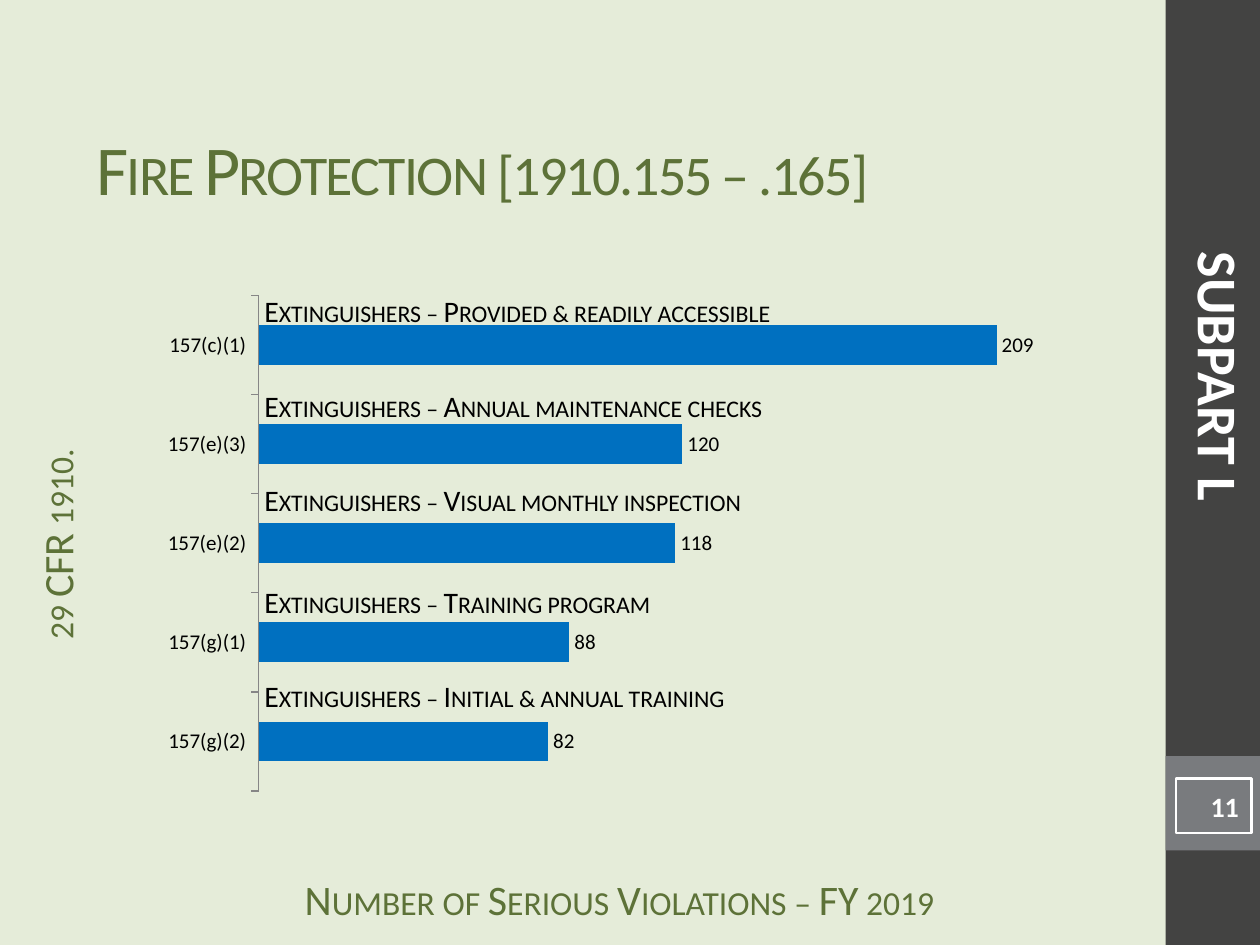
from lxml import etree
from pptx import Presentation
from pptx.chart.data import CategoryChartData
from pptx.dml.color import RGBColor
from pptx.enum.chart import XL_CHART_TYPE, XL_LABEL_POSITION, XL_TICK_MARK
from pptx.enum.shapes import MSO_SHAPE
from pptx.enum.text import MSO_ANCHOR, PP_ALIGN
from pptx.oxml.ns import qn
from pptx.util import Pt

BAR_CHART = XL_CHART_TYPE.BAR_CLUSTERED
OUTSIDE_END = XL_LABEL_POSITION.OUTSIDE_END
TICK_OUTSIDE, TICK_NONE = XL_TICK_MARK.OUTSIDE, XL_TICK_MARK.NONE
RECTANGLE = MSO_SHAPE.RECTANGLE
TOP, MIDDLE = MSO_ANCHOR.TOP, MSO_ANCHOR.MIDDLE
LEFT, CENTER, RIGHT = PP_ALIGN.LEFT, PP_ALIGN.CENTER, PP_ALIGN.RIGHT

FONT = "Calibri"
COLORS = {
    "background": "E5ECD9", "band": "434342", "band_block": "797B7E",
    "heading": "5D7238", "bar": "0070C0", "axis": "868686",
    "text": "000000", "white": "FFFFFF",
}

# Category, violations, description, top of description within the chart
VIOLATIONS = [
    ("157(c)(1)", 209, "Extinguishers – Provided & readily accessible", 1),
    ("157(e)(3)", 120, "Extinguishers – Annual maintenance checks", 55),
    ("157(e)(2)", 118, "Extinguishers – Visual monthly inspection", 109),
    ("157(g)(1)", 88, "Extinguishers – Training program", 167),
    ("157(g)(2)", 82, "Extinguishers – Initial & annual training", 221),
]
# Plot area as fractions of the chart
PLOT = {"x": 0.11, "y": 0.02, "w": 0.87, "h": 0.96}


def color(name):
    return RGBColor.from_string(COLORS[name])


def style_font(font, size, color_name, bold=False):
    font.name = FONT
    font.size = Pt(size)
    font.bold = bold
    font.color.rgb = color(color_name)


def write_text(shape, text, size, color_name, align=LEFT, anchor=TOP,
               bold=False, small_caps=False, spacing=0):
    frame = shape.text_frame
    frame.vertical_anchor = anchor
    paragraph = frame.paragraphs[0]
    paragraph.alignment = align
    style_font(paragraph.font, size, color_name, bold)
    run = paragraph.add_run()
    run.text = text
    properties = run.font._element
    if small_caps:
        properties.set("cap", "small")
    if spacing:
        properties.set("spc", str(spacing * 100))


def add_text(slide, box, text, size, color_name, wrap=True, rotation=0, **style):
    shape = slide.shapes.add_textbox(*map(Pt, box))
    shape.text_frame.word_wrap = wrap
    shape.rotation = rotation
    write_text(shape, text, size, color_name, **style)
    return shape


def add_rectangle(slide, box, fill=None, line=None):
    shape = slide.shapes.add_shape(RECTANGLE, *map(Pt, box))
    shape.shadow.inherit = False
    if fill:
        shape.fill.solid()
        shape.fill.fore_color.rgb = color(fill)
    else:
        shape.fill.background()
    if line:
        shape.line.color.rgb = color(line)
        shape.line.width = Pt(1.5)
    else:
        shape.line.fill.background()
    return shape


def add_side_band(slide, box):
    left, top, width, height = box
    add_rectangle(slide, box, fill="band")
    add_rectangle(slide, (left, top + 432, width, width), fill="band_block")

    # Page number
    number = add_rectangle(slide, (left + 6, top + 445, 43, 31), line="white")
    write_text(number, "11", 16, "white", align=RIGHT, anchor=MIDDLE, bold=True)

    # Subpart name, turned to read downwards
    add_text(slide, (left - 184.3, top + 192.2, 430.6, 46), "SUBPART L", 32,
             "white", rotation=90, align=CENTER, bold=True)


def add_axis_caption(slide, box, text, rotation=0):
    shape = add_text(slide, box, text, 24, "heading", rotation=rotation,
                     align=CENTER, small_caps=True)
    shape.text_frame.margin_top = 0


def set_plot_layout(chart):
    plot_area = chart._chartSpace.chart.plotArea
    layout = plot_area.find(qn("c:layout"))
    if layout is None:
        layout = etree.Element(qn("c:layout"))
        plot_area.insert(0, layout)
    manual = etree.SubElement(layout, qn("c:manualLayout"))
    settings = {"layoutTarget": "inner", "xMode": "edge", "yMode": "edge", **PLOT}
    for tag, value in settings.items():
        etree.SubElement(manual, qn(f"c:{tag}")).set("val", str(value))


def add_violations_chart(slide, box):
    left, top, width, height = box
    data = CategoryChartData()
    rows = VIOLATIONS[::-1]
    data.categories = [row[0] for row in rows]
    data.add_series("Series 1", [row[1] for row in rows])
    chart = slide.shapes.add_chart(BAR_CHART, *map(Pt, box), data).chart
    chart.has_legend = False
    chart.has_title = False
    style_font(chart.font, 10, "text")
    set_plot_layout(chart)

    # Axes
    category_axis = chart.category_axis
    category_axis.major_tick_mark = TICK_OUTSIDE
    category_axis.minor_tick_mark = TICK_NONE
    category_axis.has_major_gridlines = False
    category_axis.format.line.color.rgb = color("axis")
    style_font(category_axis.tick_labels.font, 12, "text")
    value_axis = chart.value_axis
    value_axis.minimum_scale = 0
    value_axis.maximum_scale = 250
    value_axis.has_major_gridlines = False
    value_axis.visible = False

    # Bars and their values
    plot = chart.plots[0]
    plot.gap_width = 150
    plot.vary_by_categories = False
    series = plot.series[0]
    series.format.fill.solid()
    series.format.fill.fore_color.rgb = color("bar")
    labels = series.data_labels
    labels.show_value = True
    labels.position = OUTSIDE_END
    style_font(labels.font, 12, "text")

    # Description above each bar
    for _, _, description, offset in VIOLATIONS:
        add_text(slide, (left + 60, top + offset, 315, 28), description, 17,
                 "text", small_caps=True)


def main():
    presentation = Presentation()
    presentation.slide_width = Pt(720)
    presentation.slide_height = Pt(540)
    slide = presentation.slides.add_slide(presentation.slide_layouts[6])
    slide.background.fill.solid()
    slide.background.fill.fore_color.rgb = color("background")

    add_side_band(slide, (666, 0, 54, 540))
    add_text(slide, (48, 42, 616, 108), "Fire Protection [1910.155 – .165]", 40,
             "heading", anchor=MIDDLE, small_caps=True, spacing=-1)
    add_violations_chart(slide, (84, 163, 580, 295))
    add_axis_caption(slide, (150, 499, 408, 24),
                     "Number of Serious Violations – FY 2019")
    add_axis_caption(slide, (-112, 290, 302, 42), "29 CFR 1910.", rotation=270)
    presentation.save("out.pptx")


if __name__ == "__main__":
    main()
